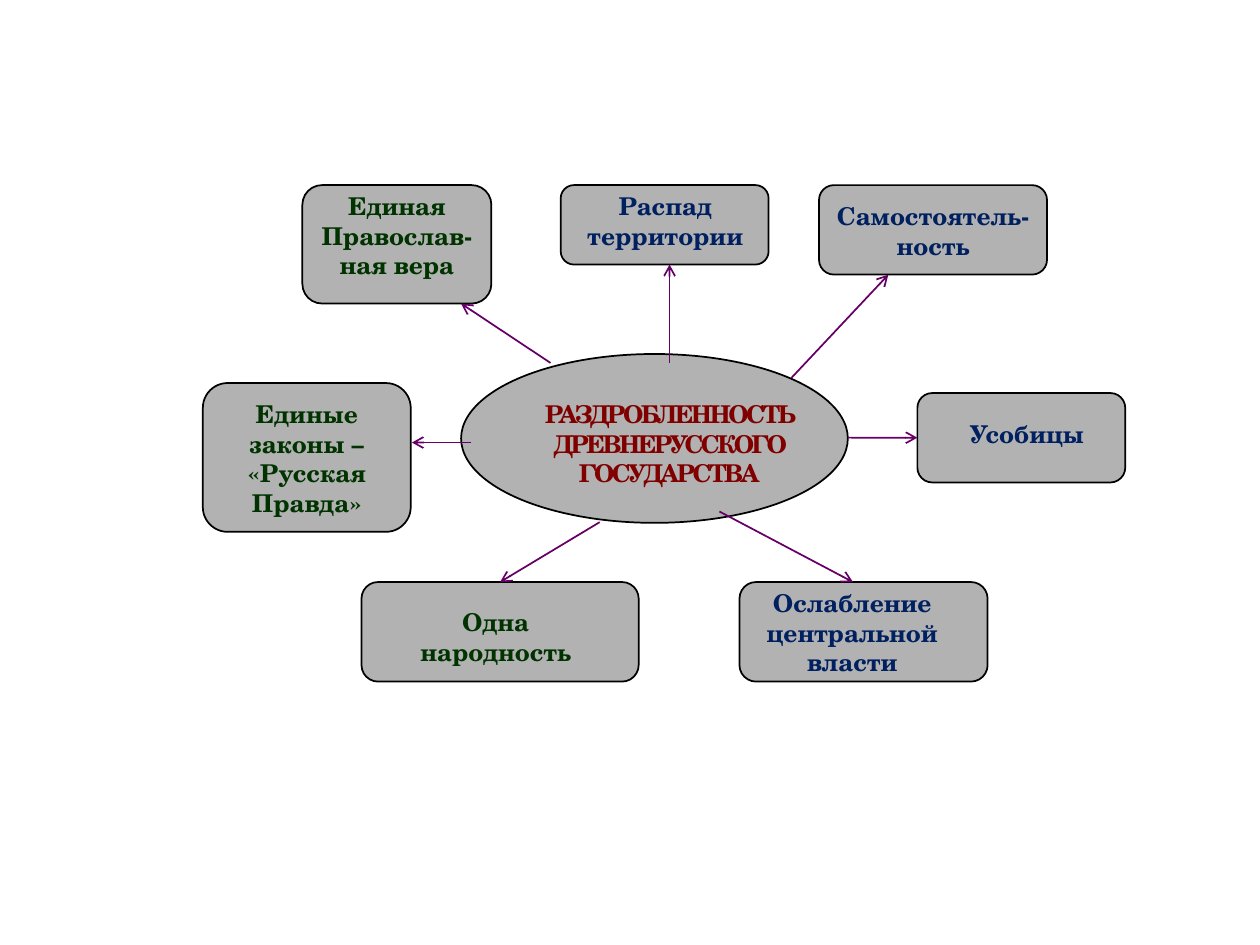
from pptx import Presentation
from pptx.dml.color import RGBColor
from pptx.enum.shapes import MSO_CONNECTOR, MSO_SHAPE
from pptx.enum.text import PP_ALIGN
from pptx.util import Pt
from lxml.etree import SubElement
from pptx.oxml.ns import qn

FONT = "TeX Gyre Schola"
GRAY, BLACK, PURPLE = "B2B2B2", "000000", "660066"
RED, BLUE, GREEN = "800000", "002060", "003300"

# Text, colour, box (left, top, width, height), label (dx, dy, width, height)
NODES = [
    ("Распад территории", BLUE, (320.4, 105.8, 118.8, 45.4), (5.8, 0, 108, 41)),
    ("Самостоятель-ность", BLUE, (468, 105.8, 130.3, 51.1), (0, 5.8, 130.3, 41)),
    ("Усобицы", BLUE, (524.2, 224.6, 118.8, 51.1), (11.5, 11.5, 102.2, 24.5)),
    ("Единая Православ-ная вера", GREEN, (172.8, 105.8, 108, 67.7), (-5.4, 0, 118.8, 58.3)),
    ("Ослабление центральной власти", BLUE, (422.6, 332.6, 141.8, 56.9), (5, 0, 118.8, 58.3)),
    ("Единые законы – «Русская Правда»", GREEN, (115.9, 218.9, 118.8, 85), (0, 5.8, 118.8, 74.9)),
    ("Одна народность", GREEN, (206.6, 332.6, 158.4, 56.9), (5.8, 10.8, 141.8, 41)),
]
CENTER_BOX = (263.5, 202.3, 221, 96.5)
CENTER_LABEL = (33.9, 22.3, 169.9, 58.3)

# Start, end, and the node and side where the arrow is joined, if any
ARROWS = [
    ((314.6, 207.4), (263.5, 173.5), None),
    ((382.6, 207.4), (382.6, 151.2), None),
    ((452.2, 216), (507.6, 157), None),
    ((484.6, 250.1), (524.2, 250.1), ("Усобицы", 1)),
    ((411.1, 292.3), (487.4, 332.6), None),
    ((342.7, 298.4), (286.6, 332.6), ("Одна народность", 0)),
    ((269.3, 252.9), (235.4, 252.9), None),
]


def rgb(value):
    return RGBColor.from_string(value)


def pts(values):
    return [Pt(v) for v in values]


def add_node(slide, kind, box, label, text, color, spacing=None):
    """Draw a gray shape and its label, placed relative to the box."""
    sp = slide.shapes.add_shape(kind, *pts(box))
    sp.shadow.inherit = False
    sp.fill.solid()
    sp.fill.fore_color.rgb = rgb(GRAY)
    sp.line.color.rgb = rgb(BLACK)
    sp.line.width = Pt(1)

    dx, dy, width, height = label
    tb = slide.shapes.add_textbox(*pts((box[0] + dx, box[1] + dy, width, height)))
    tf = tb.text_frame
    tf.word_wrap = True
    p = tf.paragraphs[0]
    p.alignment = PP_ALIGN.CENTER
    r = p.add_run()
    r.text = text
    p.font.name, p.font.size, p.font.bold = FONT, Pt(14), True
    p.font.color.rgb = rgb(color)
    if spacing is not None:
        r.font.bold = True
        r._r.get_or_add_rPr().set("spc", str(int(spacing * 100)))
    return sp


def add_arrow(slide, start, end, target=None, side=0):
    """Draw an arrow, joined to the side of the target if there is one."""
    c = slide.shapes.add_connector(MSO_CONNECTOR.STRAIGHT, *pts(start + end))
    if target is not None:
        c.end_connect(target, side)
    c.line.color.rgb = rgb(PURPLE)
    c.line.width = Pt(1)
    SubElement(c.line._get_or_add_ln(), qn("a:tailEnd"), type="arrow")
    SubElement(c._element.spPr, qn("a:effectLst"))


def add_diagram(slide):
    # Central topic
    add_node(slide, MSO_SHAPE.OVAL, CENTER_BOX, CENTER_LABEL,
             "РАЗДРОБЛЕННОСТЬ ДРЕВНЕРУССКОГО ГОСУДАРСТВА", RED, spacing=-1.5)
    # Surrounding features
    nodes = {}
    for text, color, box, label in NODES:
        nodes[text] = add_node(slide, MSO_SHAPE.FLOWCHART_ALTERNATE_PROCESS,
                               box, label, text, color)
    # Arrows from the topic outwards
    for start, end, joint in ARROWS:
        if joint:
            name, side = joint
            add_arrow(slide, start, end, nodes[name], side)
        else:
            add_arrow(slide, start, end)


def main():
    prs = Presentation()
    prs.slide_width, prs.slide_height = Pt(720), Pt(540)
    slide = prs.slides.add_slide(prs.slide_layouts[6])
    add_diagram(slide)
    prs.save("out.pptx")


if __name__ == "__main__":
    main()
